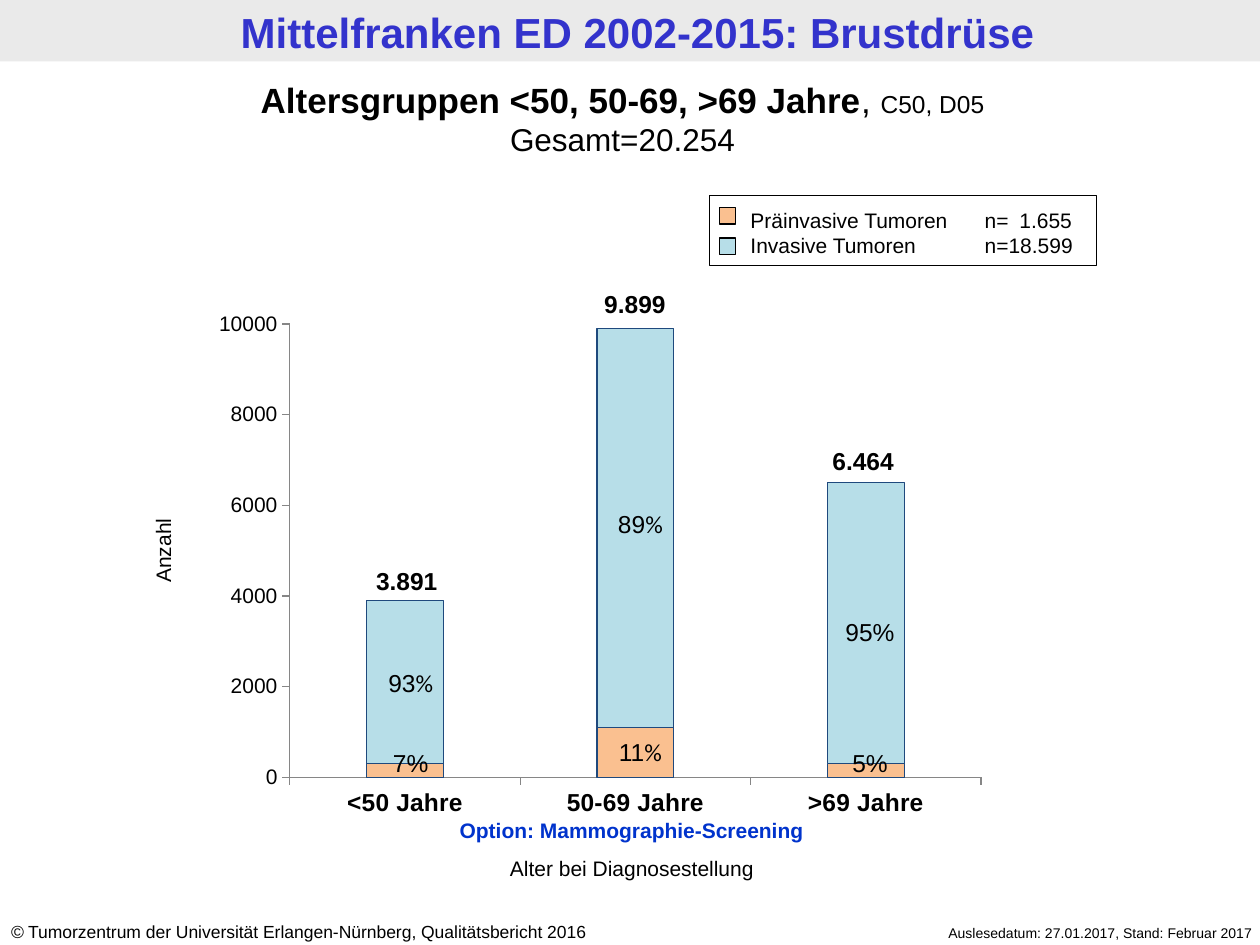
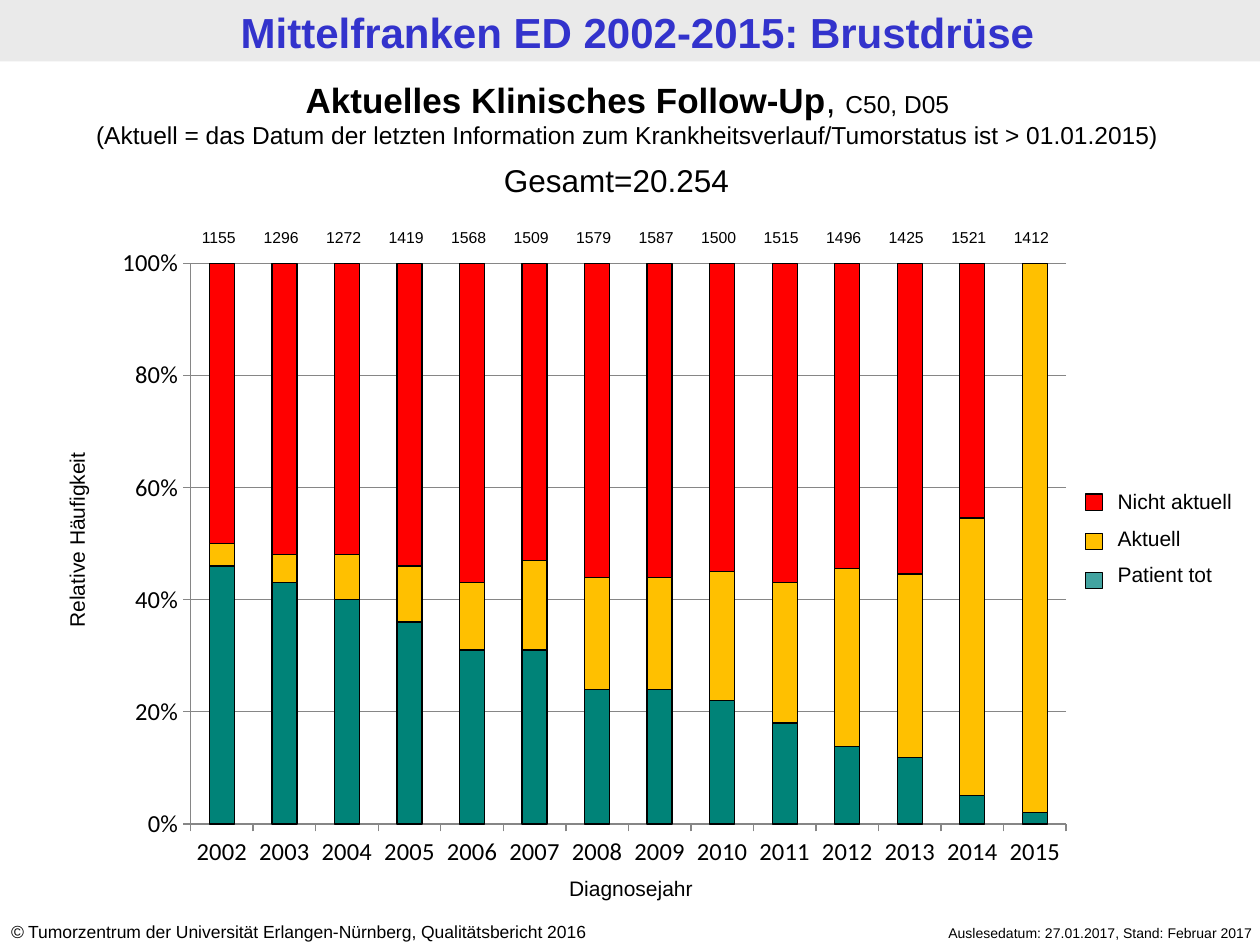
from lxml import etree
from pptx import Presentation
from pptx import util as u
from pptx.chart.data import CategoryChartData
from pptx.dml.color import RGBColor
from pptx.enum import chart as ch, shapes, text
from pptx.oxml import parse_xml
from pptx.oxml.ns import nsdecls, qn

# Colours
BLACK = RGBColor(0x00, 0x00, 0x00)
BAND = RGBColor(0xEA, 0xEA, 0xEA)
TITLE_BLUE = RGBColor(0x33, 0x33, 0xCC)
OPTION_BLUE = RGBColor(0x00, 0x33, 0xCC)
AXIS_GREY = RGBColor(0x86, 0x86, 0x86)
BAR_EDGE = RGBColor(0x1F, 0x49, 0x7D)
PEACH = RGBColor(0xFA, 0xC0, 0x90)
SKY = RGBColor(0xB7, 0xDE, 0xE8)
TEAL = RGBColor(0x00, 0x83, 0x78)
TEAL_KEY = RGBColor(0x00, 0x83, 0x80)
AMBER = RGBColor(0xFF, 0xC0, 0x00)
RED = RGBColor(0xFF, 0x00, 0x00)

LEFT, CENTER, RIGHT = text.PP_ALIGN.LEFT, text.PP_ALIGN.CENTER, text.PP_ALIGN.RIGHT

# Shared content
TITLE = "Mittelfranken ED 2002-2015: Brustdrüse"
COPYRIGHT = [("©", dict(italic=True)),
             " Tumorzentrum der Universität Erlangen-Nürnberg, Qualitätsbericht 2016"]
STATUS = "Auslesedatum: 27.01.2017, Stand: Februar 2017"
CODES = "C50, D05"
TOTAL = "Gesamt=20.254"

# Age groups: label, chart values, total and its top, then (percent, % font, top) per part
AGE_GROUPS = [
    ("<50 Jahre", (300, 3600), ("3.891", 11.28),
     [("7", "Arial", 14.96), ("93", "Calibri", 13.34)]),
    ("50-69 Jahre", (1100, 8800), ("9.899", 5.71),
     [("11", "Calibri", 14.73), ("89", "Calibri", 10.13)]),
    (">69 Jahre", (300, 6200), ("6.464", 8.86),
     [("5", "Arial", 14.96), ("95", "Arial", 12.32)]),
]
AGE_LEGEND = [("Präinvasive Tumoren\tn=\t1.655", PEACH),
              ("Invasive Tumoren\tn=\t18.599", SKY)]

# Follow-up: one entry per year of diagnosis
YEARS = [str(year) for year in range(2002, 2016)]
CASES = [1155, 1296, 1272, 1419, 1568, 1509, 1579, 1587, 1500, 1515, 1496, 1425, 1521, 1412]
FOLLOW_UP = [
    (TEAL, [46, 43, 40, 36, 31, 31, 24, 24, 22, 18, 14, 12, 5, 2]),
    (AMBER, [4, 5, 8, 10, 12, 16, 20, 20, 23, 25, 32, 33, 49, 98]),
    (RED, [50, 52, 52, 54, 57, 53, 56, 56, 55, 57, 55, 56, 45, 0]),
]
FOLLOW_UP_LEGEND = [("Nicht aktuell", RED, None), ("Aktuell", AMBER, None),
                    ("Patient tot", TEAL_KEY, 74)]


def cm(box):
    return [u.Cm(v) for v in box]


def fill_text(tf, paras, size=12, color=BLACK, bold=False, italic=False, font="Arial",
              align=CENTER, gap=0, tabs=()):
    """Each paragraph is a string or a list of strings and (string, overrides) pairs."""
    tf.word_wrap = True
    tf.vertical_anchor = text.MSO_ANCHOR.TOP
    for i, para in enumerate(paras):
        p = tf.paragraphs[0] if i == 0 else tf.add_paragraph()
        p.alignment = align
        if i and gap:
            p.space_before = u.Pt(gap)
        if tabs:
            tab_list = etree.SubElement(p._p.get_or_add_pPr(), qn("a:tabLst"))
            for pos, side in tabs:
                etree.SubElement(tab_list, qn("a:tab"), pos=str(u.Cm(pos)), algn=side)
        for run in [para] if isinstance(para, str) else para:
            words, own = (run, {}) if isinstance(run, str) else run
            fmt = {**dict(size=size, color=color, bold=bold, italic=italic, font=font), **own}
            r = p.add_run()
            r.text = words
            r.font.size = u.Pt(fmt["size"])
            r.font.color.rgb = fmt["color"]
            r.font.bold, r.font.italic, r.font.name = fmt["bold"], fmt["italic"], fmt["font"]


def add_text(s, box, *paras, rotation=0, **fmt):
    sp = s.shapes.add_textbox(*cm(box))
    sp.rotation = rotation
    fill_text(sp.text_frame, paras, **fmt)


def add_rect(s, box, fill=None, line=None, alpha=None):
    sp = s.shapes.add_shape(shapes.MSO_SHAPE.RECTANGLE, *cm(box))
    sp.shadow.inherit = False
    if fill is None:
        sp.fill.background()
    else:
        sp.fill.solid()
        sp.fill.fore_color.rgb = fill
    if alpha:
        color = sp._element.spPr.find(".//" + qn("a:srgbClr"))
        etree.SubElement(color, qn("a:alpha"), val=str(alpha * 1000))
    if line is None:
        sp.line.fill.background()
    else:
        sp.line.color.rgb = line
        sp.line.width = u.Pt(0.75)
    return sp


def add_swatch(s, x, y, fill, alpha=None):
    add_rect(s, (x, y, 0.33, 0.33), fill, BLACK, alpha)


def add_base(prs):
    """Slide with the grey band, the title and both footers."""
    s = prs.slides.add_slide(prs.slide_layouts[5])
    band = add_rect(s, (0, 0, 25.4, 1.24), BAND)
    s.shapes._spTree.insert(2, band._element)
    title = s.shapes.title
    title.left, title.top, title.width, title.height = cm((0.15, 0.03, 25.4, 1.24))
    tf = title.text_frame
    tf.auto_size = text.MSO_AUTO_SIZE.NONE
    tf.margin_top = tf.margin_bottom = u.Cm(0.1)
    fill_text(tf, [TITLE], size=24, color=TITLE_BLUE, bold=True)
    add_text(s, (-0.03, 18.44, 13.3, 0.69), COPYRIGHT, size=10, align=LEFT)
    add_text(s, (16.89, 18.52, 8.61, 0.61), STATUS, size=8, align=RIGHT)
    return s


def add_heading(s, box, topic, second_line, second_size):
    add_text(s, box, [(topic, dict(bold=True)), ", ", (CODES, dict(size=14))],
             [(second_line, dict(size=second_size))], size=20)


def add_bars(s, box, kind, cats, series, edge, gap, plot_area):
    data = CategoryChartData()
    data.categories = cats
    for i, (_, values) in enumerate(series, 1):
        data.add_series(f"Series {i}", values)
    chart = s.shapes.add_chart(kind, *cm(box), data).chart
    chart.has_legend = chart.has_title = False
    chart.font.name, chart.font.size, chart.font.color.rgb = "Calibri", u.Pt(18), BLACK
    plot = chart.plots[0]
    plot.gap_width, plot.overlap, plot.vary_by_categories = gap, 100, False
    for ser, (color, _) in zip(plot.series, series):
        ser.format.fill.solid()
        ser.format.fill.fore_color.rgb = color
        ser.format.line.color.rgb = edge
        ser.format.line.width = u.Pt(0.75)
    for axis in (chart.category_axis, chart.value_axis):
        axis.major_tick_mark = ch.XL_TICK_MARK.OUTSIDE
        axis.minor_tick_mark = ch.XL_TICK_MARK.NONE
        axis.format.line.color.rgb = AXIS_GREY
        axis.tick_labels.font.size = u.Pt(14)
    chart.value_axis.has_major_gridlines = False

    # Fixed inner plot area
    area = chart._chartSpace.chart.plotArea
    for old in area.findall(qn("c:layout")):
        area.remove(old)
    parts = "".join(f'<c:{k} val="{v}"/>' for k, v in zip("xywh", plot_area))
    area.insert(0, parse_xml(
        f'<c:layout {nsdecls("c")}><c:manualLayout><c:layoutTarget val="inner"/>'
        f'<c:xMode val="edge"/><c:yMode val="edge"/>{parts}</c:manualLayout></c:layout>'))
    return chart


def build_age_groups(prs):
    s = add_base(prs)
    labels, values, totals, shares = zip(*AGE_GROUPS)
    chart = add_bars(s, (3.84, 4.85, 17.73, 11.84), ch.XL_CHART_TYPE.COLUMN_STACKED, labels,
                     list(zip((PEACH, SKY), zip(*values))), BAR_EDGE, 200,
                     (0.113, 0.142, 0.786, 0.772))
    chart.category_axis.tick_labels.font.bold = True
    for axis in (chart.category_axis, chart.value_axis):
        axis.tick_labels.font.name = "Arial"
    axis = chart.value_axis
    axis.tick_labels.font.size = u.Pt(12)
    axis.minimum_scale, axis.maximum_scale, axis.major_unit = 0, 10000, 2000

    add_heading(s, (0, 1.45, 25.1, 1.88), "Altersgruppen <50, 50-69, >69 Jahre", TOTAL, 18)

    # Totals above and percentages inside the columns
    for i, ((total, top), parts) in enumerate(zip(totals, shares)):
        add_text(s, (6.9 + 4.6 * i, top, 2.6, 0.86), total, size=14, bold=True)
        for number, font, part_top in parts:
            add_text(s, (7.28 + 4.63 * i, part_top, 2, 0.86),
                     [number, ("%", dict(font=font))], size=14)

    # Axis captions
    add_text(s, (8.51, 17.12, 8.46, 0.76), "Alter bei Diagnosestellung")
    add_text(s, (-0.03, 10.72, 6.63, 0.76), "Anzahl", rotation=270)
    add_text(s, (8.71, 16.36, 8.05, 0.76), "Option: Mammographie-Screening",
             color=OPTION_BLUE, bold=True)

    # Legend
    add_rect(s, (14.3, 3.94, 7.8, 1.42), line=BLACK)
    add_text(s, (14.88, 4.06, 7.11, 1.27), *[label for label, _ in AGE_LEGEND],
             align=LEFT, tabs=[(4.72, "l"), (6.48, "r")])
    for i, (_, color) in enumerate(AGE_LEGEND):
        add_swatch(s, 14.5, 4.19 + 0.61 * i, color)


def build_follow_up(prs):
    s = add_base(prs)
    chart = add_bars(s, (2.08, 4.75, 19.81, 12.98), ch.XL_CHART_TYPE.COLUMN_STACKED_100, YEARS,
                     FOLLOW_UP, BLACK, 150, (0.089, 0.043, 0.891, 0.871))
    axis = chart.value_axis
    axis.major_unit = 0.2
    axis.has_major_gridlines = True
    axis.major_gridlines.format.line.color.rgb = AXIS_GREY
    axis.tick_labels.number_format = "0%"
    axis.tick_labels.number_format_is_linked = False

    add_heading(s, (-0.1, 1.45, 25.5, 1.7), "Aktuelles Klinisches Follow-Up",
                "(Aktuell = das Datum der letzten Information zum "
                "Krankheitsverlauf/Tumorstatus ist > 01.01.2015)", 14)
    add_text(s, (9.91, 3.12, 5.59, 1.02), TOTAL, size=18, align=LEFT)

    # Axis captions
    add_text(s, (-1.5, 10.49, 6.12, 0.79), "Relative Häufigkeit", rotation=270)
    add_text(s, (9.86, 17.53, 5.72, 0.79), "Diagnosejahr")

    # Legend
    add_text(s, (22.28, 9.73, 3.12, 2.31), *[label for label, _, _ in FOLLOW_UP_LEGEND],
             align=LEFT, gap=6.5)
    for i, (_, color, alpha) in enumerate(FOLLOW_UP_LEGEND):
        add_swatch(s, 21.89, 9.96 + 0.79 * i, color, alpha)

    # Cases per year above the columns
    for i, count in enumerate(CASES):
        add_text(s, (3.71 + 1.26 * i, 4.47, 1.4, 0.64), str(count), size=9)


def main():
    prs = Presentation()
    prs.slide_width, prs.slide_height = u.Cm(25.4), u.Cm(19.05)
    build_age_groups(prs)
    build_follow_up(prs)
    prs.save("out.pptx")


if __name__ == "__main__":
    main()
